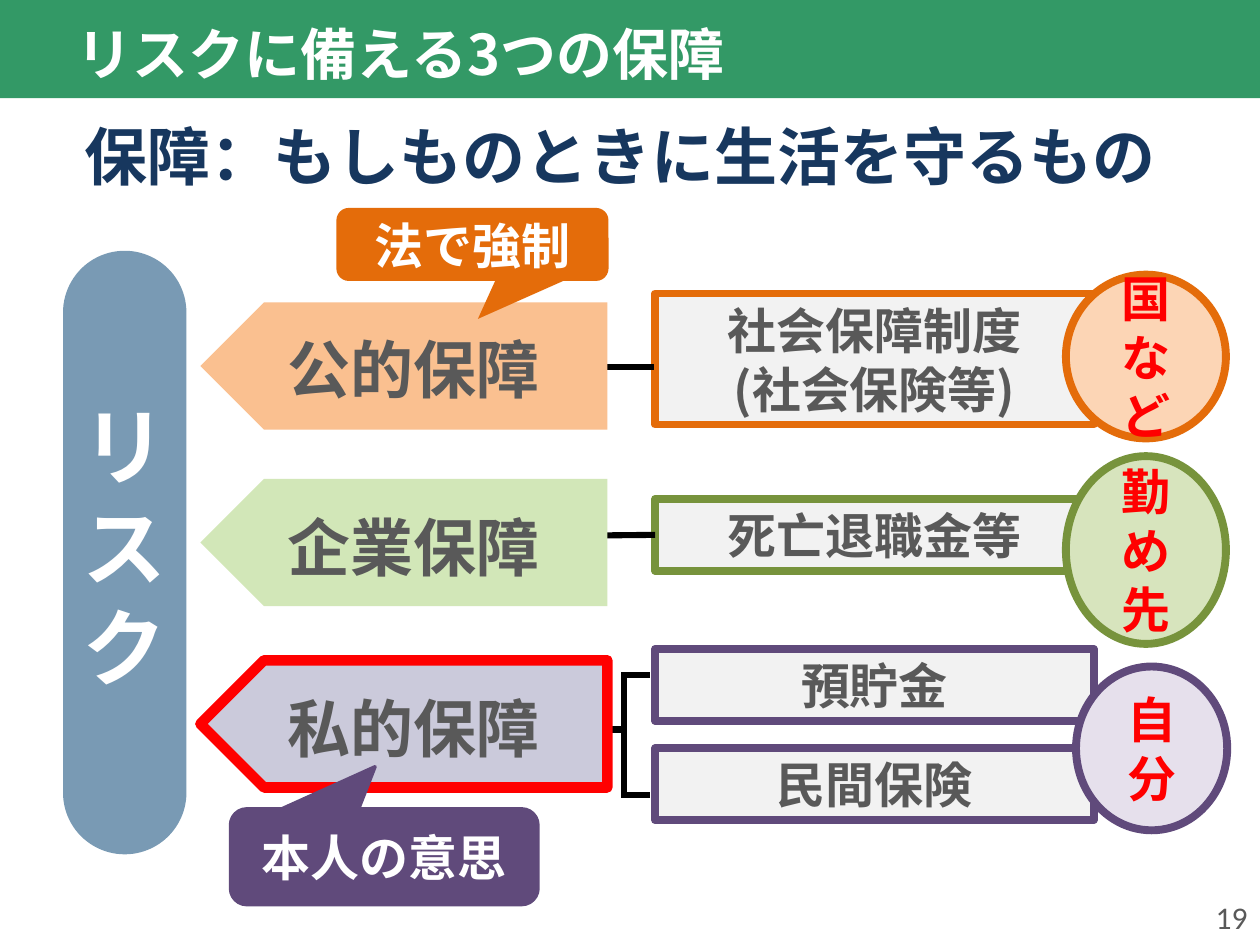
import pptx
import pptx.util
import pptx.dml.color
import pptx.enum.shapes
import pptx.enum.text
import pptx.oxml
import pptx.oxml.ns

Inches = pptx.util.Inches
SHAPE = pptx.enum.shapes.MSO_SHAPE
ALIGN = pptx.enum.text.PP_ALIGN
JAPANESE_FONT = "Noto Sans CJK JP"

COLORS = {
    "header": "339966", "navy": "17375E", "white": "FFFFFF", "black": "000000",
    "gray": "595959", "box": "F2F2F2", "risk": "799AB4", "red": "FF0000",
    "orange": "E46C0A", "green": "77933C", "purple": "604A7B",
    "orange_plate": "FAC090", "green_plate": "D2E7B8", "purple_plate": "CBCADB",
    "orange_pale": "FCD5B5", "green_pale": "D7E4BD", "purple_pale": "E6E0EC",
}


class SlideBuilder:
    def __init__(self, slide):
        self.slide = slide

    def color(self, name):
        return pptx.dml.color.RGBColor.from_string(COLORS[name])

    def set_text(self, shape, text, size, color, align=ALIGN.CENTER, bold=True,
                 font=JAPANESE_FONT, wrap=True):
        frame = shape.text_frame
        frame.word_wrap = wrap
        frame.vertical_anchor = pptx.enum.text.MSO_ANCHOR.MIDDLE
        frame.text = text
        for paragraph in frame.paragraphs:
            paragraph.alignment = align
            paragraph.font.size = pptx.util.Pt(size)
            paragraph.font.bold = bold
            paragraph.font.color.rgb = self.color(color)
            paragraph.font.name = font
            properties = paragraph._p.pPr.find(pptx.oxml.ns.qn("a:defRPr"))
            east_asian = pptx.oxml.parse_xml(
                f'<a:ea {pptx.oxml.ns.nsdecls("a")} typeface="{font}"/>')
            properties.append(east_asian)

    def text(self, bounds, text, size, color, **style):
        box = self.slide.shapes.add_textbox(*map(Inches, bounds))
        self.set_text(box, text, size, color, **style)

    def shape(self, kind, bounds, fill=None, line=None, width=4.5, adjustments=()):
        shape = self.slide.shapes.add_shape(kind, *map(Inches, bounds))
        shape.shadow.inherit = False
        if fill:
            shape.fill.solid()
            shape.fill.fore_color.rgb = self.color(fill)
        else:
            shape.fill.background()
        if line:
            shape.line.color.rgb = self.color(line)
            shape.line.width = pptx.util.Pt(width)
        else:
            shape.line.fill.background()
        for index, value in enumerate(adjustments):
            shape.adjustments[index] = value
        return shape

    def labelled(self, kind, bounds, text, size, color, **style):
        shape = self.shape(kind, bounds, **style)
        self.set_text(shape, text, size, color)
        return shape

    def plate(self, top, **style):
        shape = self.shape(SHAPE.PENTAGON, (1.59, top, 3.23, 1.01), **style)
        shape.rotation = 180

    def connector(self, start_x, start_y, end_x, end_y):
        line = self.slide.shapes.add_connector(
            pptx.enum.shapes.MSO_CONNECTOR.STRAIGHT,
            *map(Inches, (start_x, start_y, end_x, end_y)))
        line.line.color.rgb = self.color("black")
        line.line.width = pptx.util.Pt(3.5)
        line._element.spPr.append(pptx.oxml.parse_xml(
            f'<a:effectLst {pptx.oxml.ns.nsdecls("a")}/>'))
        return line


def main():
    presentation = pptx.Presentation()
    presentation.slide_width = Inches(10)
    presentation.slide_height = Inches(7.5)
    slide = presentation.slides.add_slide(presentation.slide_layouts[6])
    builder = SlideBuilder(slide)

    builder.shape(SHAPE.RECTANGLE, (0, 0, 10, 0.78), fill="header")
    builder.text((0.51, 0.03, 6.9, 0.79), "リスクに備える3つの保障", 32, "white",
                 align=ALIGN.LEFT)
    builder.text((0.41, 0.84, 9.03, 0.79), "保障：もしものときに生活を守るもの",
                 36, "navy")

    boxes = {}
    for text, top, height, line in (
        ("社会保障制度\n(社会保険等)", 2.33, 1.04, "orange"),
        ("死亡退職金等", 3.96, 0.57, "green"),
        ("預貯金", 5.15, 0.57, "purple"),
        ("民間保険", 5.94, 0.57, "purple"),
    ):
        boxes[text] = builder.labelled(
            SHAPE.RECTANGLE, (5.2, top, 3.48, height), text, 28, "gray",
            fill="box", line=line)

    builder.connector(4.71, 2.91, 5.19, 2.91)
    company_line = builder.connector(4.71, 4.25, 5.2, 4.25)
    company_line.end_connect(boxes["死亡退職金等"], 1)
    builder.connector(4.7, 5.79, 4.94, 5.79)
    for branch_y in (5.36, 6.31):
        builder.connector(4.93, branch_y, 5.16, branch_y)
    builder.connector(4.95, 5.34, 4.95, 6.32)

    builder.shape(SHAPE.ROUNDED_RECTANGLE, (0.5, 1.99, 0.98, 4.79), fill="risk",
                  adjustments=(0.5,))
    builder.labelled(SHAPE.OVAL, (0, 2.24, 1.98, 4.18), "リ\nス\nク", 48, "white")

    for text, plate_top, text_top, fill in (
        ("公的保障", 2.4, 2.57, "orange_plate"),
        ("企業保障", 3.8, 3.98, "green_plate"),
        ("私的保障", 5.25, 5.42, "purple_plate"),
    ):
        builder.plate(plate_top, fill=fill)
        builder.text((2.18, text_top, 2.22, 0.71), text, 36, "gray",
                     align=ALIGN.LEFT, wrap=False)

    for text, bounds, line in (
        ("国など", (8.46, 2.18, 1.27, 1.3), "orange"),
        ("勤\nめ先", (8.46, 3.62, 1.27, 1.49), "green"),
        ("自分", (8.54, 5.29, 1.2, 1.3), "purple"),
    ):
        builder.labelled(SHAPE.OVAL, bounds, text, 28, "red",
                         fill=f"{line}_pale", line=line)

    builder.labelled(SHAPE.ROUNDED_RECTANGULAR_CALLOUT, (2.67, 1.65, 2.16, 0.58),
                     "法で強制", 28, "white", fill="orange",
                     adjustments=(0.02, 1.02, 0.17))
    builder.plate(5.24, line="red", width=6)
    builder.labelled(SHAPE.ROUNDED_RECTANGULAR_CALLOUT, (1.83, 6.42, 2.44, 0.76),
                     "本人の意思", 28, "white", fill="purple", line="purple",
                     width=2, adjustments=(-0.03, -0.94, 0.17))
    builder.text((7.67, 7.08, 2.33, 0.4), "19", 18, "gray", align=ALIGN.RIGHT,
                 bold=False, font="Calibri")

    presentation.save("out.pptx")


if __name__ == "__main__":
    main()
